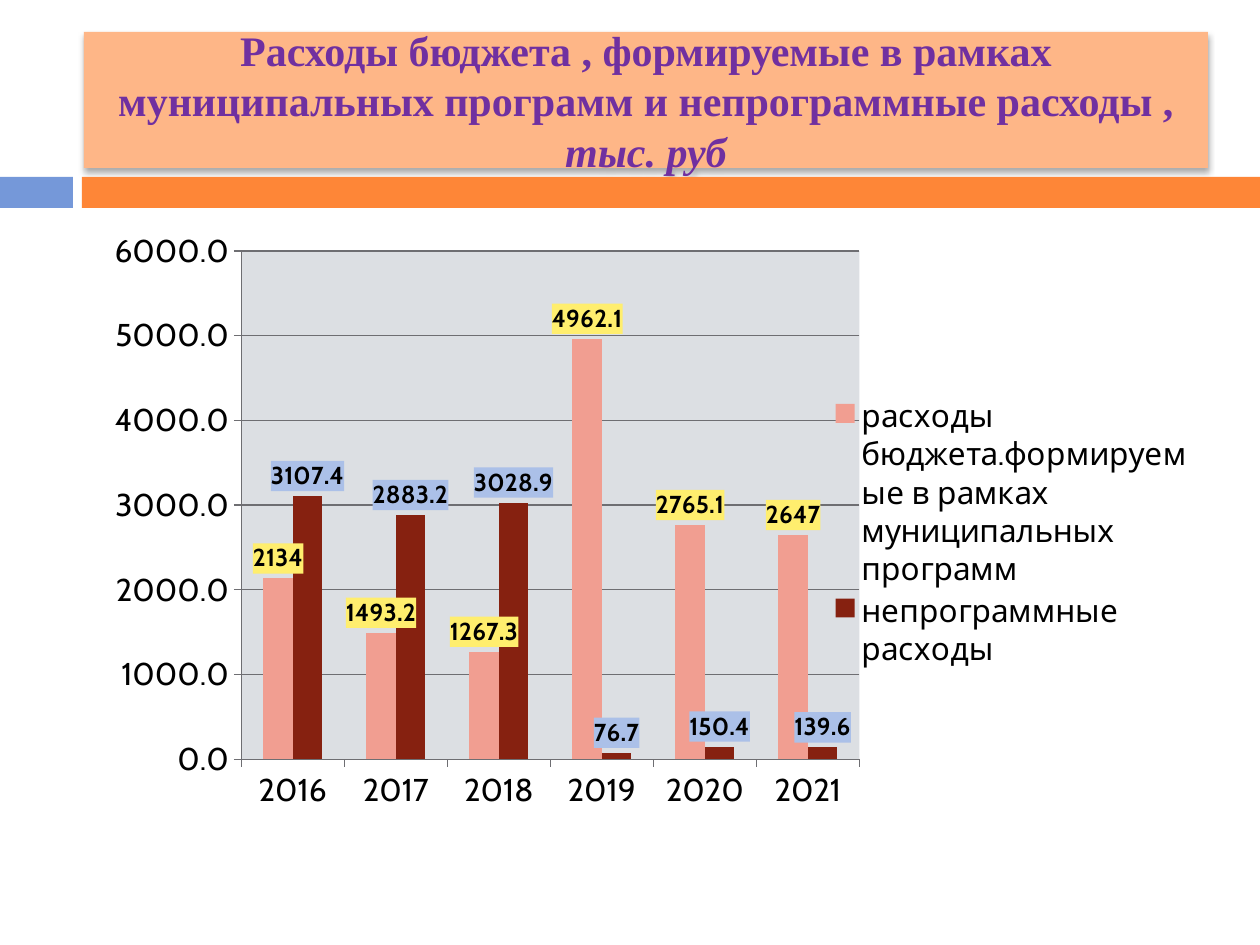
"""Builds a slide charting programme and non-programme budget spending."""
from lxml import etree
from pptx import Presentation
from pptx.chart.data import CategoryChartData
from pptx.dml.color import RGBColor
from pptx.enum.chart import XL_CHART_TYPE as CT, XL_LABEL_POSITION as LP
from pptx.enum.chart import XL_LEGEND_POSITION as LegPos, XL_TICK_MARK as Tick
from pptx.enum.shapes import MSO_SHAPE as Shp
from pptx.enum.text import MSO_ANCHOR as Anchor, MSO_AUTO_SIZE as Auto, PP_ALIGN as Align
from pptx.oxml import parse_xml
from pptx.oxml.ns import nsdecls, qn
from pptx.util import Pt

TITLE = [
    ("Расходы бюджета , формируемые в рамках муниципальных программ "
     "и непрограммные расходы , ", False),
    ("тыс. руб", True),
]
YEARS = ["2016", "2017", "2018", "2019", "2020", "2021"]
SERIES = [
    ("расходы бюджета.формируемые в рамках муниципальных программ",
     [2134, 1493.2, 1267.3, 4962.1, 2765.1, 2647], "F19E91", "FFEE6E"),
    ("непрограммные расходы",
     [3107.4, 2883.2, 3028.9, 76.7, 150.4, 139.6], "862110", "ABC0E8"),
]
THEME = {
    "blue": "7598D9", "orange": "FE8637", "banner": "FEB687", "title": "7030A0",
    "text": "000000", "plot": "DCDFE3", "line": "6E6E72",
    "title_font": "Times New Roman", "chart_font": "Cabin",
    "title_size": 24, "chart_size": 18, "label_size": 14,
}
PX = 914400 / 126
BANDS = [((0, 177, 73, 31), "blue"), ((82, 177, 1178, 31), "orange")]
TITLE_BOX = (84, 32, 1124, 136)
CHART_BOX = (84, 220, 1124, 620)
PLOT_BOX = (0.14, 0.05, 0.55, 0.82)
LEGEND_BOX = (0.66, 0.28, 0.33, 0.45)


def emu(box):
    return [round(v * PX) for v in box]


def rgb(key):
    return RGBColor.from_string(THEME.get(key, key))


def set_font(font, size, color, name, bold=False):
    font.size, font.name, font.bold = Pt(size), name, bold
    font.color.rgb = rgb(color)


def fill_xml(color):
    return parse_xml(f'<c:spPr {nsdecls("c", "a")}><a:solidFill><a:srgbClr val="{color}"/>'
                     '</a:solidFill><a:ln><a:noFill/></a:ln></c:spPr>')


def layout_xml(box, inner=False):
    target = '<c:layoutTarget val="inner"/>' if inner else ""
    modes = '<c:xMode val="edge"/><c:yMode val="edge"/>'
    sizes = "".join(f'<c:{k} val="{v}"/>' for k, v in zip("xywh", box))
    return parse_xml(f'<c:layout {nsdecls("c")}><c:manualLayout>{target}{modes}{sizes}'
                     '</c:manualLayout></c:layout>')


def drop(parent, tag):
    for el in parent.findall(qn(tag)):
        parent.remove(el)


def add_bands(s):
    for box, color in BANDS:
        sp = s.shapes.add_shape(Shp.RECTANGLE, *emu(box))
        sp.shadow.inherit = False
        sp.fill.solid()
        sp.fill.fore_color.rgb = rgb(color)
        sp.line.fill.background()


def add_title(s):
    sp = s.shapes.title
    sp.left, sp.top, sp.width, sp.height = emu(TITLE_BOX)
    sp.fill.solid()
    sp.fill.fore_color.rgb = rgb("banner")
    effects = etree.SubElement(sp._element.spPr, qn("a:effectLst"))
    shadow = etree.SubElement(effects, qn("a:outerShdw"), blurRad=str(Pt(3.5)),
                              dist=str(Pt(2.2)), dir="5400000", rotWithShape="0")
    color = etree.SubElement(shadow, qn("a:srgbClr"), val="000000")
    etree.SubElement(color, qn("a:alpha"), val="32000")
    tf = sp.text_frame
    tf.word_wrap, tf.auto_size, tf.vertical_anchor = True, Auto.NONE, Anchor.MIDDLE
    p = tf.paragraphs[0]
    p.alignment = Align.CENTER
    for text, italic in TITLE:
        r = p.add_run()
        r.text = text
        set_font(r.font, THEME["title_size"], "title", THEME["title_font"], True)
        r.font.italic = italic


def style_series(ser, color, label_fill):
    ser.format.fill.solid()
    ser.format.fill.fore_color.rgb = rgb(color)
    ser.invert_if_negative = False
    labels = ser.data_labels
    labels.show_value = True
    labels.position = LP.OUTSIDE_END
    set_font(labels.font, THEME["label_size"], "text", THEME["chart_font"], True)
    labels._element.find(qn("c:txPr")).addprevious(fill_xml(label_fill))


def add_chart(s):
    data = CategoryChartData()
    data.categories = YEARS
    for name, values, *_ in SERIES:
        data.add_series(name, values)
    chart = s.shapes.add_chart(CT.COLUMN_CLUSTERED, *emu(CHART_BOX), data).chart
    set_font(chart.font, THEME["chart_size"], "text", THEME["chart_font"])
    chart.has_title = False
    plot = chart.plots[0]
    plot.gap_width, plot.overlap, plot.vary_by_categories = 150, 0, False
    for ser, (_, _, color, label_fill) in zip(plot.series, SERIES):
        style_series(ser, color, label_fill)

    val = chart.value_axis
    val.minimum_scale, val.maximum_scale, val.major_unit = 0, 6000, 1000
    val.tick_labels.number_format = "0.0"
    val.tick_labels.number_format_is_linked = False
    val.has_major_gridlines = True
    for axis in (val, chart.category_axis):
        axis.major_tick_mark = Tick.OUTSIDE
        axis.format.line.color.rgb = rgb("line")
    val.major_gridlines.format.line.color.rgb = rgb("line")

    chart.has_legend = True
    legend = chart.legend
    legend.position, legend.include_in_layout = LegPos.RIGHT, False
    drop(legend._element, "c:layout")
    legend._element.find(qn("c:legendPos")).addnext(layout_xml(LEGEND_BOX))
    area = plot._element.getparent()
    drop(area, "c:layout")
    area.insert(0, layout_xml(PLOT_BOX, inner=True))
    area.append(fill_xml(THEME["plot"]))


def main():
    prs = Presentation()
    prs.slide_width, prs.slide_height = emu((1260, 945))
    s = prs.slides.add_slide(prs.slide_layouts[5])
    add_bands(s)
    add_title(s)
    add_chart(s)
    prs.save("out.pptx")


if __name__ == "__main__":
    main()
